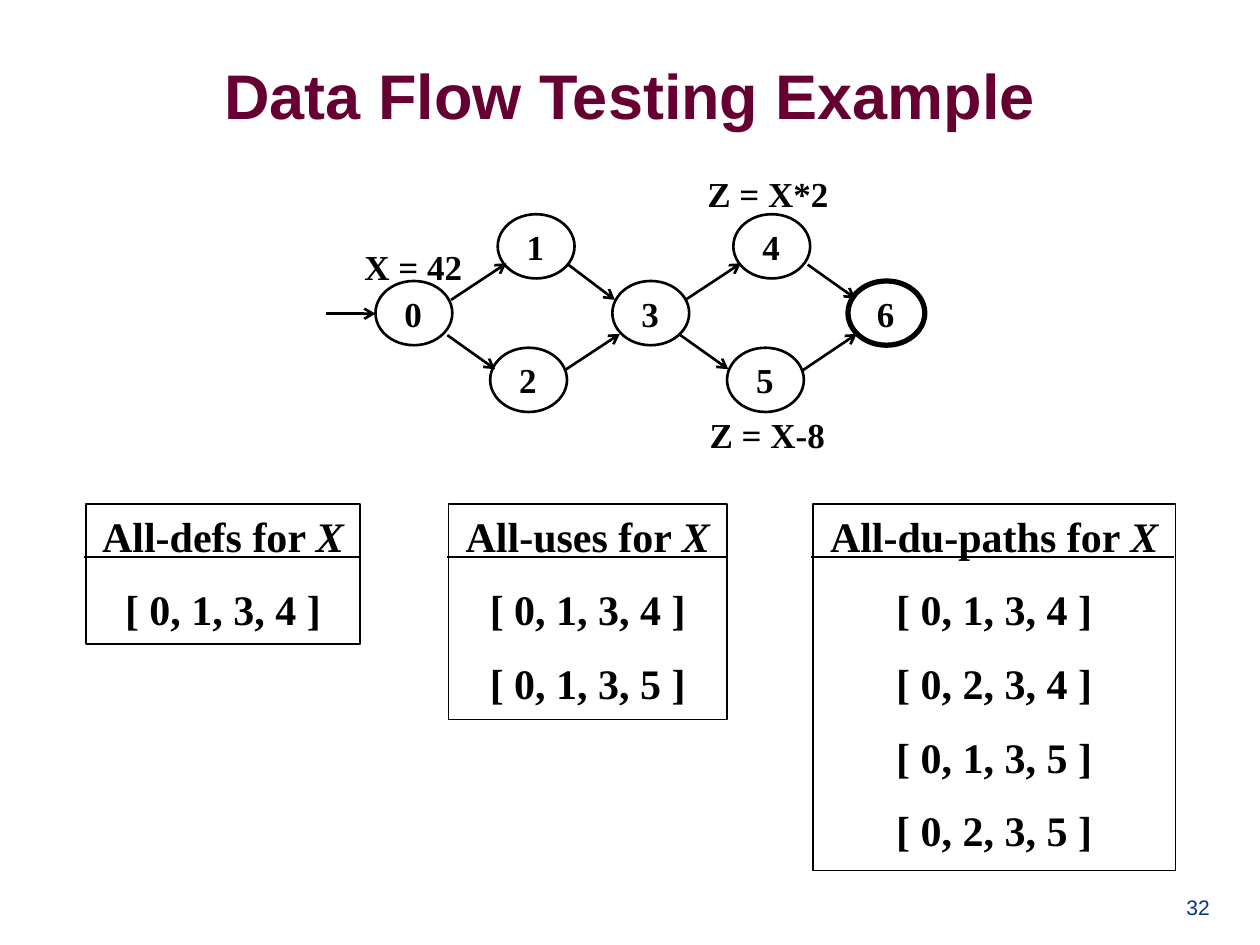
from dataclasses import dataclass

from lxml.etree import SubElement
from pptx import Presentation
from pptx.dml.color import RGBColor
from pptx.enum.shapes import MSO_CONNECTOR, MSO_SHAPE
from pptx.enum.text import MSO_ANCHOR, PP_ALIGN
from pptx.oxml.ns import qn
from pptx.util import Inches, Pt


@dataclass(frozen=True)
class Theme:
    heading_font: str = "Arial"
    body_font: str = "Times New Roman"
    background: RGBColor = RGBColor(0xFF, 0xFF, 0xFF)
    ink: RGBColor = RGBColor(0x00, 0x00, 0x00)
    title: RGBColor = RGBColor(0x66, 0x00, 0x33)
    number: RGBColor = RGBColor(0x00, 0x33, 0x99)
    title_size: int = 36
    path_size: int = 24
    graph_size: int = 20
    number_size: int = 12
    path_gap: float = 13.3
    line: float = 1.5
    frame_line: float = 1
    final_line: float = 3


@dataclass(frozen=True)
class Node:
    name: str
    left: float
    top: float
    width: float = 0.61
    height: float = 0.51
    final: bool = False


@dataclass(frozen=True)
class Edge:
    start: tuple[float, float]
    end: tuple[float, float]


@dataclass(frozen=True)
class Label:
    text: str
    left: float
    top: float
    width: float
    height: float = 0.43


@dataclass(frozen=True)
class Criterion:
    name: str
    left: float
    width: float
    height: float
    paths: tuple[str, ...]


THEME = Theme()
UPPER, MIDDLE, LOWER = 1.7, 2.23, 2.76
FRAME_TOP, RULE_TOP = 4, 4.42

NODES = (
    Node("0", 2.98, MIDDLE),
    Node("1", 3.95, UPPER),
    Node("2", 3.89, LOWER),
    Node("3", 4.86, MIDDLE),
    Node("4", 5.82, UPPER),
    Node("5", 5.77, LOWER),
    Node("6", 6.73, MIDDLE, final=True),
)
EDGES = (
    Edge((2.59, 2.49), (2.98, 2.49)),
    Edge((3.58, 2.38), (4.02, 2.09)),
    Edge((3.55, 2.66), (3.93, 2.93)),
    Edge((4.51, 2.1), (4.88, 2.38)),
    Edge((4.48, 2.94), (4.92, 2.65)),
    Edge((5.44, 2.38), (5.88, 2.09)),
    Edge((5.4, 2.66), (5.78, 2.93)),
    Edge((6.41, 2.1), (6.79, 2.37)),
    Edge((6.37, 2.94), (6.8, 2.65)),
)
LABELS = (
    Label("X = 42", 2.72, 1.9, 1.12),
    Label("Z = X-8", 5.53, 3.23, 1.12),
    Label("Z = X*2", 5.44, 1.32, 1.31),
)
CRITERIA = (
    Criterion("All-defs", 0.68, 2.18, 1.11, ("[ 0, 1, 3, 4 ]",)),
    Criterion("All-uses", 3.56, 2.21, 1.71, ("[ 0, 1, 3, 4 ]", "[ 0, 1, 3, 5 ]")),
    Criterion("All-du-paths", 6.45, 2.88, 2.91,
              ("[ 0, 1, 3, 4 ]", "[ 0, 2, 3, 4 ]", "[ 0, 1, 3, 5 ]", "[ 0, 2, 3, 5 ]")),
)


def add_span(para, text: str, size: int, font: str = THEME.body_font,
             color: RGBColor = THEME.ink, bold: bool = True, italic: bool = False) -> None:
    span = para.add_run()
    span.text = text
    span.font.size = Pt(size)
    span.font.name = font
    span.font.color.rgb = color
    span.font.bold = bold
    span.font.italic = italic


def add_text(shapes, label: Label, size: int, wrap: bool = True,
             align: PP_ALIGN = PP_ALIGN.CENTER, anchor: MSO_ANCHOR = MSO_ANCHOR.TOP,
             **style) -> None:
    box = shapes.add_textbox(Inches(label.left), Inches(label.top),
                             Inches(label.width), Inches(label.height))
    frame = box.text_frame
    frame.word_wrap = wrap
    frame.vertical_anchor = anchor
    para = frame.paragraphs[0]
    para.alignment = align
    add_span(para, label.text, size, **style)


def add_outline(shapes, preset: MSO_SHAPE, left: float, top: float,
                width: float, height: float, weight: float):
    shape = shapes.add_shape(preset, Inches(left), Inches(top), Inches(width), Inches(height))
    shape.shadow.inherit = False
    shape.fill.background()
    shape.line.color.rgb = THEME.ink
    shape.line.width = Pt(weight)
    return shape


def add_line(shapes, edge: Edge, arrow: bool = False) -> None:
    line = shapes.add_connector(MSO_CONNECTOR.STRAIGHT, *map(Inches, edge.start + edge.end))
    line.line.color.rgb = THEME.ink
    line.line.width = Pt(THEME.line)
    properties = line._element.spPr
    if arrow:
        SubElement(properties.find(qn("a:ln")), qn("a:tailEnd"), type="arrow")
    SubElement(properties, qn("a:effectLst"))


def add_node(shapes, node: Node) -> None:
    weight = THEME.final_line if node.final else THEME.line
    add_outline(shapes, MSO_SHAPE.OVAL, node.left, node.top, node.width, node.height, weight)
    label = Label(node.name, node.left + 0.13, node.top + 0.04, 0.34)
    add_text(shapes, label, THEME.graph_size, wrap=False)


def add_criterion(shapes, criterion: Criterion) -> None:
    box = add_outline(shapes, MSO_SHAPE.RECTANGLE, criterion.left, FRAME_TOP,
                      criterion.width, criterion.height, THEME.frame_line)
    frame = box.text_frame
    frame.word_wrap = True
    frame.vertical_anchor = MSO_ANCHOR.TOP
    heading = frame.paragraphs[0]
    heading.alignment = PP_ALIGN.CENTER
    add_span(heading, f"{criterion.name} for ", THEME.path_size)
    add_span(heading, "X", THEME.path_size, italic=True)
    for path in criterion.paths:
        para = frame.add_paragraph()
        para.alignment = PP_ALIGN.CENTER
        para.space_before = Pt(THEME.path_gap)
        add_span(para, path, THEME.path_size)
    start = criterion.left - 0.01
    add_line(shapes, Edge((start, RULE_TOP), (start + criterion.width, RULE_TOP)))


def main() -> None:
    deck = Presentation()
    deck.slide_width, deck.slide_height = Inches(10), Inches(7.5)
    page = deck.slides.add_slide(deck.slide_layouts[6])
    page.background.fill.solid()
    page.background.fill.fore_color.rgb = THEME.background

    add_text(page.shapes, Label("Data Flow Testing Example", 0.5, 0.12, 9, 1.25),
             THEME.title_size, anchor=MSO_ANCHOR.MIDDLE,
             font=THEME.heading_font, color=THEME.title)
    add_text(page.shapes, Label("32", 9.01, 6.83, 0.69, 0.52), THEME.number_size,
             align=PP_ALIGN.RIGHT, anchor=MSO_ANCHOR.BOTTOM,
             font=THEME.heading_font, color=THEME.number, bold=False)

    graph = page.shapes.add_group_shape().shapes
    for node in NODES:
        add_node(graph, node)
    for edge in EDGES:
        add_line(graph, edge, arrow=True)
    for label in LABELS:
        add_text(graph, label, THEME.graph_size)

    for criterion in CRITERIA:
        add_criterion(page.shapes.add_group_shape().shapes, criterion)

    deck.save("out.pptx")


if __name__ == "__main__":
    main()
